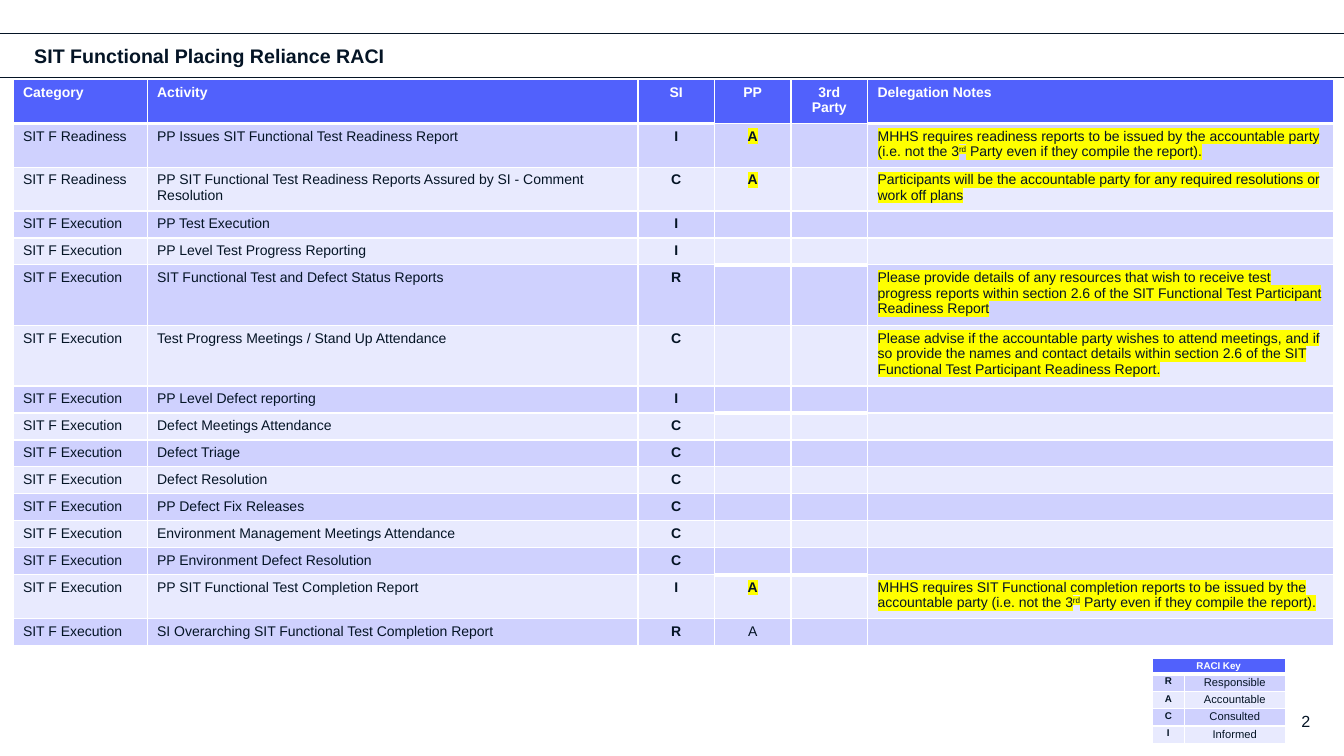
from lxml.etree import SubElement
from pptx import Presentation
from pptx.dml.color import RGBColor
from pptx.enum.shapes import MSO_CONNECTOR as Connector
from pptx.enum.text import MSO_ANCHOR as Anchor, PP_ALIGN as Align
from pptx.oxml.ns import qn
from pptx.util import Pt

SLIDE_WIDTH, SLIDE_HEIGHT = 960, 540
INK, WHITE, HEADER, YELLOW = "041425", "FFFFFF", "5161FC", "FFFF00"
BANDS = ("CFD1FE", "E8EAFE")
THIN, THICK = 1, 3


def color(value):
    return RGBColor.from_string(value)


def write(frame, text, size=10, ink=INK, bold=False, align=Align.LEFT,
          highlight=None, spacing=None, font="Arial"):
    """Write one paragraph; parts between ^ marks are superscript."""
    paragraph = frame.paragraphs[0]
    paragraph.alignment = align
    if spacing:
        paragraph.line_spacing = spacing
    if not text:
        SubElement(paragraph._p, qn("a:endParaRPr"), sz=str(size * 100))
        return
    for index, part in enumerate(text.split("^")):
        run = paragraph.add_run()
        run.text = part
        run.font.size, run.font.bold = Pt(size), bold
        run.font.color.rgb = color(ink)
        properties = run._r.get_or_add_rPr()
        if highlight:
            mark = SubElement(properties, qn("a:highlight"))
            SubElement(mark, qn("a:srgbClr"), val=highlight)
        run.font.name = font
        if index % 2:
            properties.set("baseline", "30000")


class SlideBuilder:
    def __init__(self, slide):
        self.slide = slide

    def rule(self, y):
        line = self.slide.shapes.add_connector(
            Connector.STRAIGHT, 0, Pt(y), Pt(SLIDE_WIDTH), Pt(y))
        line.line.color.rgb = color(INK)
        line.line.width = Pt(0.75)
        SubElement(line._element.spPr, qn("a:effectLst"))

    def text(self, left, top, width, height, text, **style):
        box = self.slide.shapes.add_textbox(Pt(left), Pt(top), Pt(width), Pt(height))
        frame = box.text_frame
        frame.word_wrap = True
        frame.vertical_anchor = Anchor.MIDDLE
        frame.margin_left = frame.margin_right = 0
        frame.margin_top = frame.margin_bottom = 0
        write(frame, text, **style)

    def table(self, left, top, widths, heights):
        shape = self.slide.shapes.add_table(
            len(heights), len(widths), Pt(left), Pt(top), Pt(sum(widths)), Pt(sum(heights)))
        table = shape.table
        for column, width in zip(table.columns, widths):
            column.width = Pt(width)
        for row, height in zip(table.rows, heights):
            row.height = Pt(height)
        return table

    def cell(self, cell, text, fill, inset, top=THIN, bottom=THIN, **style):
        cell.margin_left = cell.margin_right = Pt(inset[0])
        cell.margin_top = cell.margin_bottom = Pt(inset[1])
        properties = cell._tc.get_or_add_tcPr()
        for side, width in (("L", THIN), ("R", THIN), ("T", top), ("B", bottom)):
            border = SubElement(properties, qn(f"a:ln{side}"), w=str(Pt(width)))
            SubElement(SubElement(border, qn("a:solidFill")), qn("a:srgbClr"), val=WHITE)
        cell.fill.solid()
        cell.fill.fore_color.rgb = color(fill)
        write(cell.text_frame, text, **style)


READY, RUN = "SIT F Readiness", "SIT F Execution"
HEADINGS = ("Category", "Activity", "SI", "PP", "3rd Party", "Delegation Notes")
# Category, activity, SI, PP, delegation note, lines of text
ACTIVITIES = [
    (READY, "PP Issues SIT Functional Test Readiness Report", "I", "A",
     "MHHS requires readiness reports to be issued by the accountable party "
     "(i.e. not the 3^rd^ Party even if they compile the report).", 2),
    (READY, "PP SIT Functional Test Readiness Reports Assured by SI - Comment Resolution",
     "C", "A", "Participants will be the accountable party for any required "
     "resolutions or work off plans", 2),
    (RUN, "PP Test Execution", "I", "", "", 1),
    (RUN, "PP Level Test Progress Reporting", "I", "", "", 1),
    (RUN, "SIT Functional Test and Defect Status Reports", "R", "",
     "Please provide details of any resources that wish to receive test progress reports "
     "within section 2.6 of the SIT Functional Test Participant Readiness Report", 3),
    (RUN, "Test Progress Meetings / Stand Up Attendance", "C", "",
     "Please advise if the accountable party wishes to attend meetings, and if so provide "
     "the names and contact details within section 2.6 of the SIT Functional Test "
     "Participant Readiness Report.", 3),
    (RUN, "PP Level Defect reporting", "I", "", "", 1),
    (RUN, "Defect Meetings Attendance", "C", "", "", 1),
    (RUN, "Defect Triage", "C", "", "", 1),
    (RUN, "Defect Resolution", "C", "", "", 1),
    (RUN, "PP Defect Fix Releases", "C", "", "", 1),
    (RUN, "Environment Management Meetings Attendance", "C", "", "", 1),
    (RUN, "PP Environment Defect Resolution", "C", "", "", 1),
    (RUN, "PP SIT Functional Test Completion Report", "I", "A",
     "MHHS requires SIT Functional completion reports to be issued by the accountable "
     "party (i.e. not the 3^rd^ Party even if they compile the report).", 2),
    (RUN, "SI Overarching SIT Functional Test Completion Report", "R", "A", "", 1),
]
RACI_KEY = (("R", "Responsible"), ("A", "Accountable"), ("C", "Consulted"), ("I", "Informed"))
ROLE_COLUMNS = (2, 3, 4)
# Rows and columns of the cells with a thick lower border
THICK_BELOW = ({(0, column) for column in (0, 1, 2, 5)}
               | {(row, column) for row in (4, 7, 13) for column in (3, 4)})


def add_raci_table(builder):
    line_counts = [2] + [activity[-1] for activity in ACTIVITIES]
    table = builder.table(9.3, 56.9, (95.8, 350.6, 54.7, 54.7, 54.7, 332.6),
                          [7.2 + 11.2 * count for count in line_counts])
    rows = [HEADINGS] + [(category, activity, si, pp, "", note)
                         for category, activity, si, pp, note, _ in ACTIVITIES]
    for row, texts in enumerate(rows):
        for column, text in enumerate(texts):
            style = {"align": Align.CENTER if column in ROLE_COLUMNS else Align.LEFT}
            if row == 0:
                style.update(fill=HEADER, ink=WHITE, bold=True)
            else:
                delegated = bool(texts[-1])
                style.update(fill=BANDS[(row - 1) % 2],
                             bold=column == 2 or column == 3 and delegated,
                             highlight=YELLOW if column in (3, 5) and delegated else None)
            builder.cell(table.cell(row, column), text, inset=(7.2, 3.6),
                         top=THICK if (row - 1, column) in THICK_BELOW else THIN,
                         bottom=THICK if (row, column) in THICK_BELOW else THIN, **style)


def add_key_table(builder):
    table = builder.table(823, 470.2, (23, 72), [10.4] + [11.8] * len(RACI_KEY))
    inset = (2.9, 1.4)
    table.cell(0, 0).merge(table.cell(0, 1))
    builder.cell(table.cell(0, 0), "RACI Key", HEADER, inset, bottom=THICK,
                 size=7, ink=WHITE, bold=True, align=Align.CENTER)
    for row, texts in enumerate(RACI_KEY, 1):
        for column, text in enumerate(texts):
            builder.cell(table.cell(row, column), text, BANDS[(row - 1) % 2], inset,
                         top=THICK if row == 1 else THIN,
                         size=7 + column, bold=column == 0, align=Align.CENTER)


def main():
    presentation = Presentation()
    presentation.slide_width, presentation.slide_height = Pt(SLIDE_WIDTH), Pt(SLIDE_HEIGHT)
    builder = SlideBuilder(presentation.slides.add_slide(presentation.slide_layouts[6]))

    # Title band
    for y in (24, 55.4):
        builder.rule(y)
    builder.text(24.5, 31.7, 414.7, 18, "SIT Functional Placing Reliance RACI",
                 size=14, bold=True, spacing=0.9)

    # Page number
    builder.text(678, 500.4, 258, 28.8, "2", size=11.5, align=Align.RIGHT)

    # Tables
    add_key_table(builder)
    add_raci_table(builder)
    presentation.save("out.pptx")


if __name__ == "__main__":
    main()
